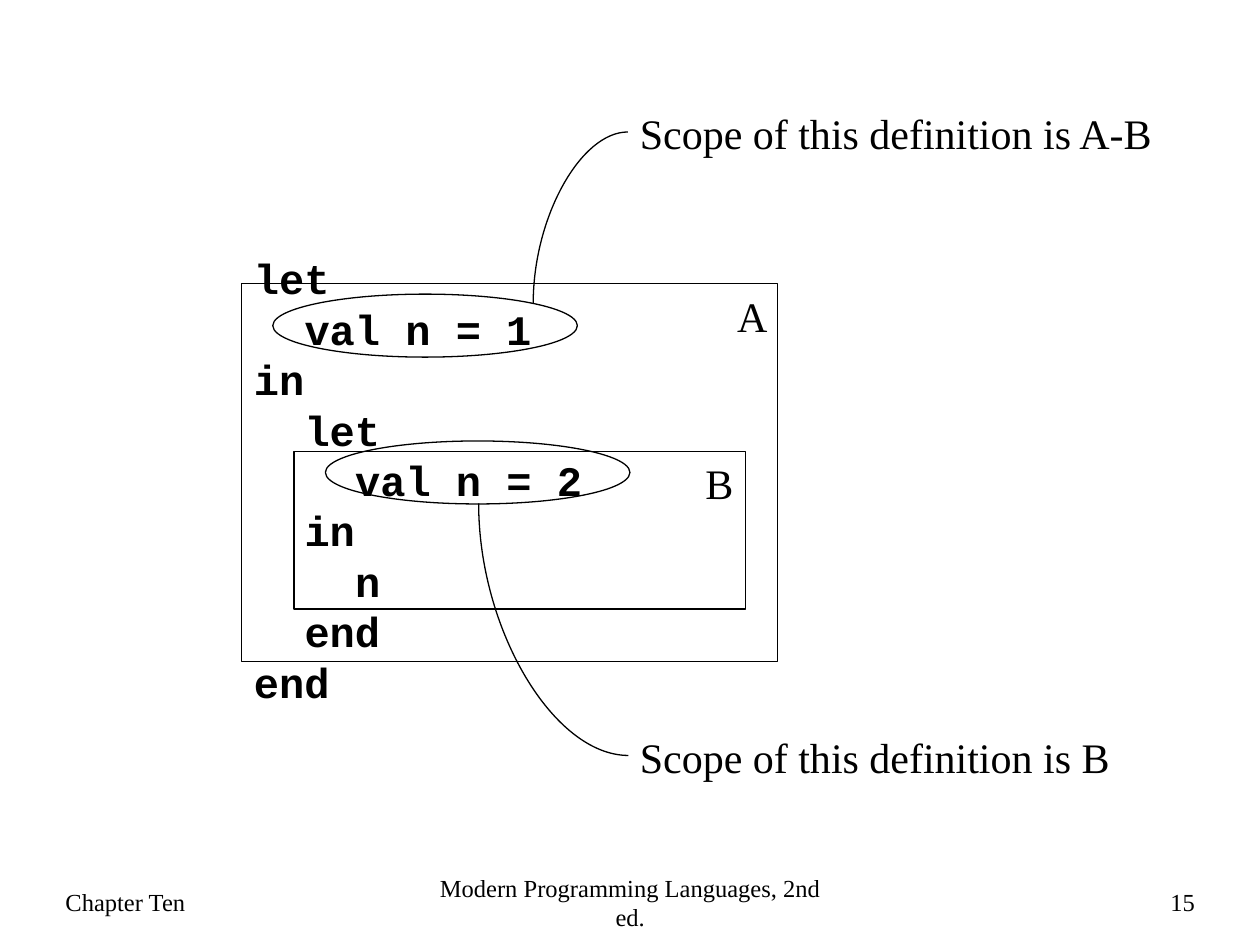
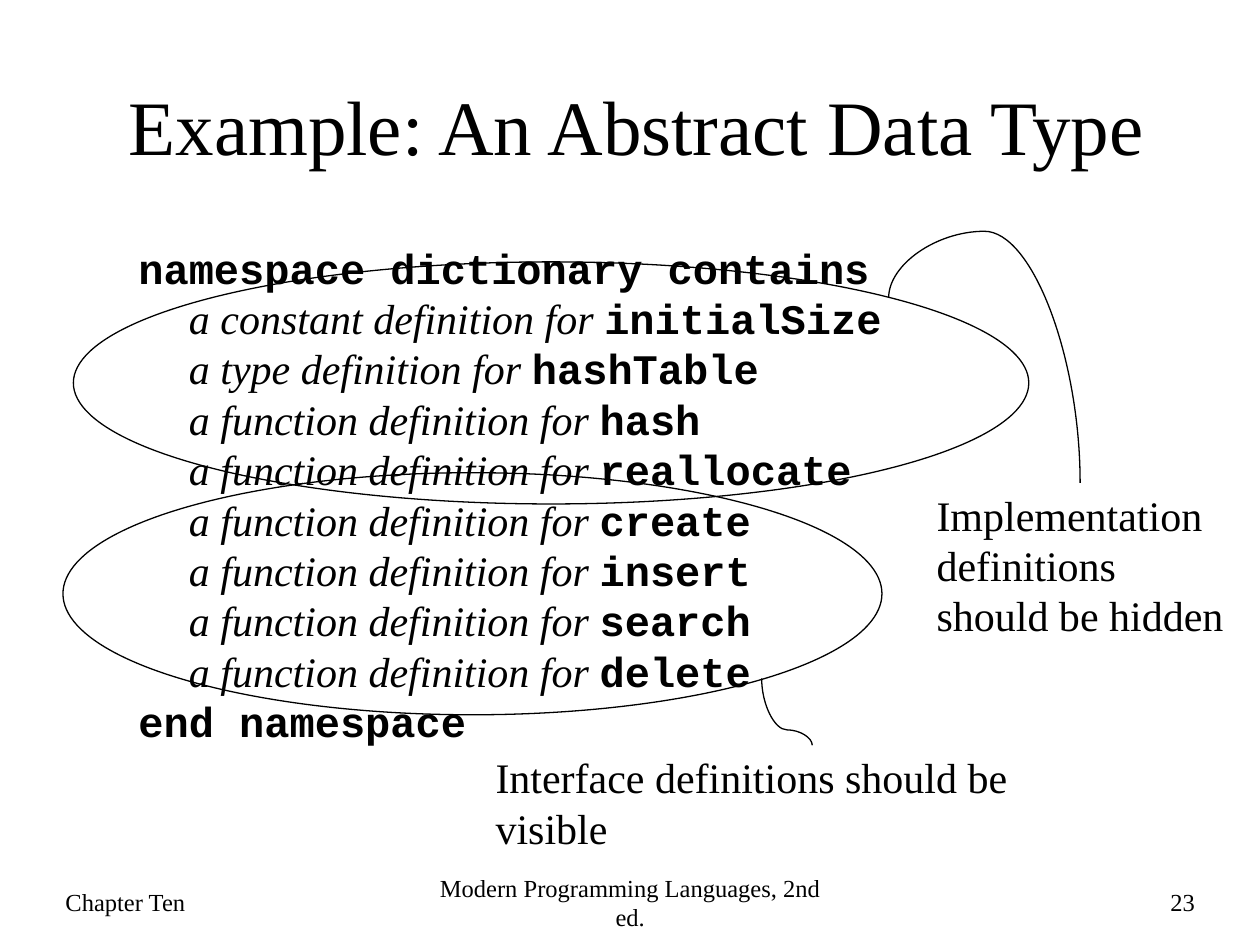
from dataclasses import dataclass

from lxml import etree
from pptx import Presentation
from pptx.dml.color import RGBColor
from pptx.enum.shapes import MSO_CONNECTOR, MSO_SHAPE
from pptx.enum.text import MSO_ANCHOR, MSO_AUTO_SIZE, PP_ALIGN
from pptx.oxml.ns import qn
from pptx.util import Cm, Pt

INK = RGBColor(0x00, 0x00, 0x00)
PAPER = RGBColor(0xFF, 0xFF, 0xFF)
SERIF, MONO = "Times New Roman", "Courier New"
LEFT, CENTER, RIGHT = PP_ALIGN.LEFT, PP_ALIGN.CENTER, PP_ALIGN.RIGHT
TOP, MIDDLE = MSO_ANCHOR.TOP, MSO_ANCHOR.MIDDLE
RECTANGLE, OVAL = MSO_SHAPE.RECTANGLE, MSO_SHAPE.OVAL
CURVE = MSO_CONNECTOR.CURVE
TITLE_ONLY, BLANK = 5, 6

LINE_WIDTH = Pt(0.75)
LINE_PITCH = Pt(28.8)
INDENT = Cm(1.02)
LABEL_HEIGHT = 1.27

PLAIN = {"name": SERIF, "size": Pt(24)}
CODE = {"name": MONO, "size": Pt(24), "bold": True}
PROSE = {"name": SERIF, "size": Pt(24), "italic": True}
FOOTER = {"name": SERIF, "size": Pt(14)}
TITLE = {"name": SERIF, "size": Pt(44)}


@dataclass(frozen=True)
class Box:
    """A place on the slide, in centimetres."""
    left: float
    top: float
    width: float
    height: float = LABEL_HEIGHT

    def lengths(self) -> tuple:
        return Cm(self.left), Cm(self.top), Cm(self.width), Cm(self.height)


@dataclass(frozen=True)
class Line:
    """A line of text: (words, format) pieces at an indent level."""
    pieces: tuple
    level: int = 0


@dataclass(frozen=True)
class Label:
    box: Box
    lines: tuple
    wrap: bool = False


@dataclass(frozen=True)
class Outline:
    kind: int
    box: Box


@dataclass(frozen=True)
class Curve:
    """A curved connector; box is its frame before rotation."""
    box: Box
    rotation: int
    preset: str
    flip_h: bool = False
    flip_v: bool = False
    bend: float | None = None


def apply(target, values: dict) -> None:
    for attribute, value in values.items():
        setattr(target, attribute, value)


def add_run(paragraph, words: str, style: dict) -> None:
    run = paragraph.add_run()
    run.text = words
    apply(run.font, style)
    run.font.color.rgb = INK


def add_text(slide, box: Box, lines: list[Line], wrap: bool = True,
             align=LEFT, anchor=TOP, pitch=None, inset_top=Cm(0.13)) -> None:
    frame = slide.shapes.add_textbox(*box.lengths()).text_frame
    apply(frame, {"word_wrap": wrap, "vertical_anchor": anchor,
                  "margin_top": inset_top})
    for index, line in enumerate(lines):
        paragraph = frame.add_paragraph() if index else frame.paragraphs[0]
        apply(paragraph, {"alignment": align, "line_spacing": pitch})
        if line.level:
            properties = paragraph._p.get_or_add_pPr()
            properties.set("marL", str(line.level * INDENT))
            properties.set("indent", "0")
        for words, style in line.pieces:
            add_run(paragraph, words, style)


def add_code(slide, box: Box, lines: list[Line]) -> None:
    add_text(slide, box, lines, pitch=LINE_PITCH, inset_top=Cm(0.23))


def add_label(slide, label: Label) -> None:
    lines = [Line(((words, PLAIN),)) for words in label.lines]
    add_text(slide, label.box, lines, wrap=label.wrap, pitch=LINE_PITCH)


def add_outline(slide, outline: Outline) -> None:
    shape = slide.shapes.add_shape(outline.kind, *outline.box.lengths())
    shape.shadow.inherit = False
    shape.fill.background()
    shape.line.color.rgb = INK
    shape.line.width = LINE_WIDTH


def add_curve(slide, curve: Curve) -> None:
    left, top, width, height = curve.box.lengths()
    xs, ys = (left, left + width), (top, top + height)
    if curve.flip_h:
        xs = xs[::-1]
    if curve.flip_v:
        ys = ys[::-1]
    connector = slide.shapes.add_connector(CURVE, xs[0], ys[0], xs[1], ys[1])
    connector.line.color.rgb = INK
    connector.line.width = LINE_WIDTH
    properties = connector.element.spPr
    properties.find(qn("a:xfrm")).set("rot", str(curve.rotation * 60000))
    geometry = properties.find(qn("a:prstGeom"))
    geometry.set("prst", curve.preset)
    if curve.bend is not None:
        guide = etree.SubElement(geometry.find(qn("a:avLst")), qn("a:gd"))
        guide.set("name", "adj1")
        guide.set("fmla", f"val {round(curve.bend * 100000)}")
    etree.SubElement(properties, qn("a:effectLst"))


def add_slide(deck, layout: int, number: int):
    """Add a slide with the shared background and footer."""
    slide = deck.slides.add_slide(deck.slide_layouts[layout])
    slide.background.fill.solid()
    slide.background.fill.fore_color.rgb = PAPER
    footers = (
        ("Chapter Ten", 1.07, 5.72, LEFT),
        ("Modern Programming Languages, 2nd ed.", 8.47, 8.47, CENTER),
        (str(number), 19.05, 5.29, RIGHT),
    )
    for words, left, width, align in footers:
        add_text(slide, Box(left, 17.55, width), [Line(((words, FOOTER),))],
                 align=align, anchor=MIDDLE)
    return slide


def set_title(slide, words: str) -> None:
    title = slide.shapes.title
    left, top, width, height = Box(2.34, 0.97, 21.59, 3.07).lengths()
    apply(title, {"left": left, "top": top, "width": width, "height": height})
    apply(title.text_frame, {"vertical_anchor": MIDDLE, "word_wrap": True,
                             "auto_size": MSO_AUTO_SIZE.NONE})
    paragraph = title.text_frame.paragraphs[0]
    paragraph.alignment = LEFT
    add_run(paragraph, words, TITLE)


def draw_annotations(slide, outlines: tuple, labels: tuple, curves: tuple) -> None:
    for outline in outlines:
        add_outline(slide, outline)
    for label in labels:
        add_label(slide, label)
    for curve in curves:
        add_curve(slide, curve)


def build_scope_slide(deck) -> None:
    slide = add_slide(deck, BLANK, 15)
    nested_lets = (
        (0, "let"), (1, "val n = 1"), (0, "in"),
        (1, "let"), (2, "val n = 2"), (1, "in"), (2, "n"), (1, "end"),
        (0, "end"),
    )
    add_code(slide, Box(4.87, 4.87, 8.06, 9.38),
             [Line(((words, CODE),), level) for level, words in nested_lets])
    draw_annotations(
        slide,
        outlines=(
            Outline(RECTANGLE, Box(4.87, 5.72, 10.8, 7.62)),
            Outline(RECTANGLE, Box(5.93, 9.1, 9.1, 3.18)),
            Outline(OVAL, Box(5.5, 5.93, 6.14, 1.27)),
            Outline(OVAL, Box(6.56, 8.89, 6.14, 1.27)),
        ),
        labels=(
            Label(Box(12.65, 2.03, 10.87), ("Scope of this definition is A-B",)),
            Label(Box(12.65, 14.61, 9.98), ("Scope of this definition is B",)),
            Label(Box(14.61, 5.72, 1.12), ("A",)),
            Label(Box(13.97, 9.1, 1.07), ("B",)),
        ),
        curves=(
            Curve(Box(9.98, 3.43, 3.45, 1.91), 270, "curvedConnector2"),
            Curve(Box(8.62, 11.18, 5.08, 3.02), 270, "curvedConnector2",
                  flip_h=True),
        ),
    )


def build_data_type_slide(deck) -> None:
    slide = add_slide(deck, TITLE_ONLY, 23)
    set_title(slide, "Example: An Abstract Data Type")
    members = [("constant", "initialSize"), ("type", "hashTable")]
    members += [("function", name) for name in
                ("hash", "reallocate", "create", "insert", "search", "delete")]
    definitions = [
        Line(((f"a {kind} definition for ", PROSE), (name, CODE)), level=1)
        for kind, name in members
    ]
    add_code(slide, Box(2.54, 4.65, 17.58, 10.39), [
        Line((("namespace dictionary contains", CODE),)),
        *definitions,
        Line((("end namespace", CODE),)),
    ])
    draw_annotations(
        slide,
        outlines=(
            Outline(OVAL, Box(1.27, 9.53, 16.51, 4.88)),
            Outline(OVAL, Box(1.48, 5.28, 19.26, 4.88)),
        ),
        labels=(
            Label(Box(9.74, 15.03, 12.95),
                  ("Interface definitions should be visible",), wrap=True),
            Label(Box(18.63, 9.73, 6.3, 3.3),
                  ("Implementation", "definitions", "should be hidden")),
        ),
        curves=(
            Curve(Box(17.98, 5.94, 3.73, 3.86), 90, "curvedConnector3",
                  flip_v=True, bend=-0.36),
            Curve(Box(15.19, 13.84, 1.35, 1.02), 270, "curvedConnector3",
                  flip_h=True, bend=0.77),
        ),
    )


def main() -> None:
    deck = Presentation()
    deck.slide_width, deck.slide_height = Cm(25.4), Cm(19.05)
    build_scope_slide(deck)
    build_data_type_slide(deck)
    deck.save("out.pptx")


if __name__ == "__main__":
    main()
